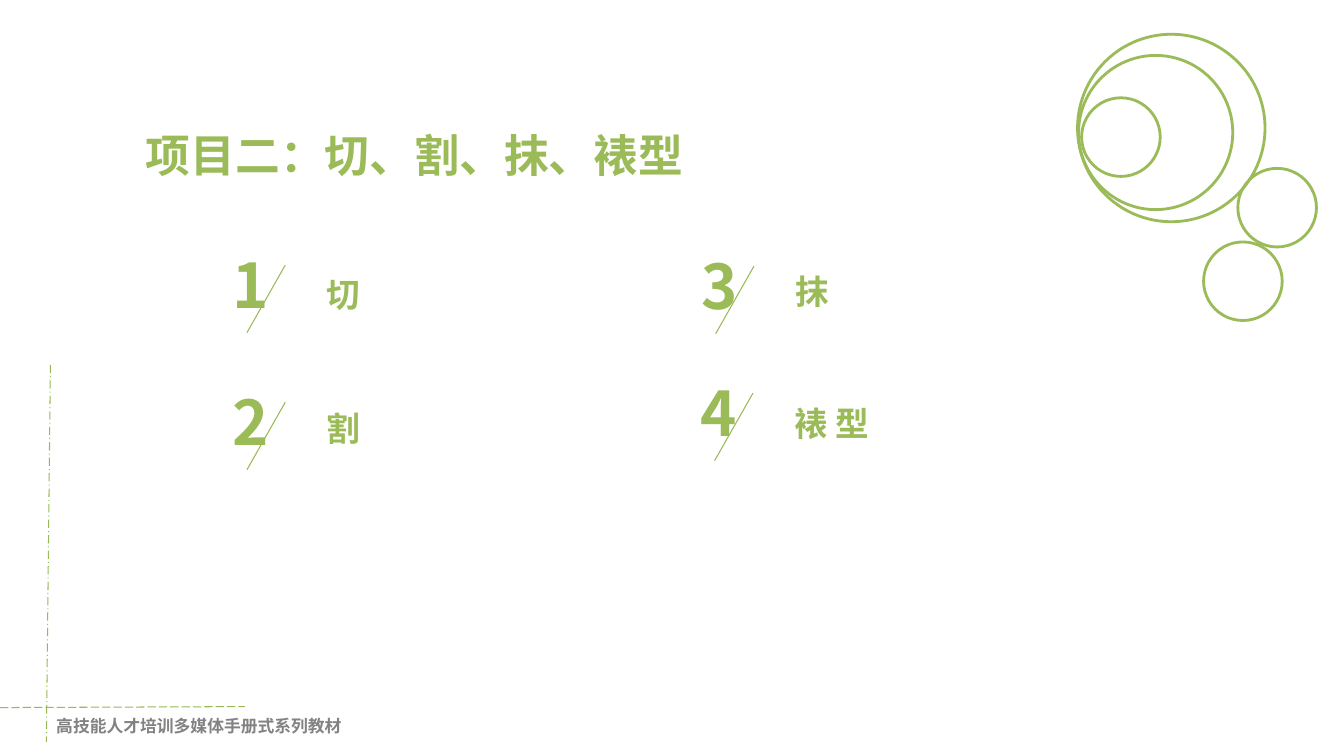
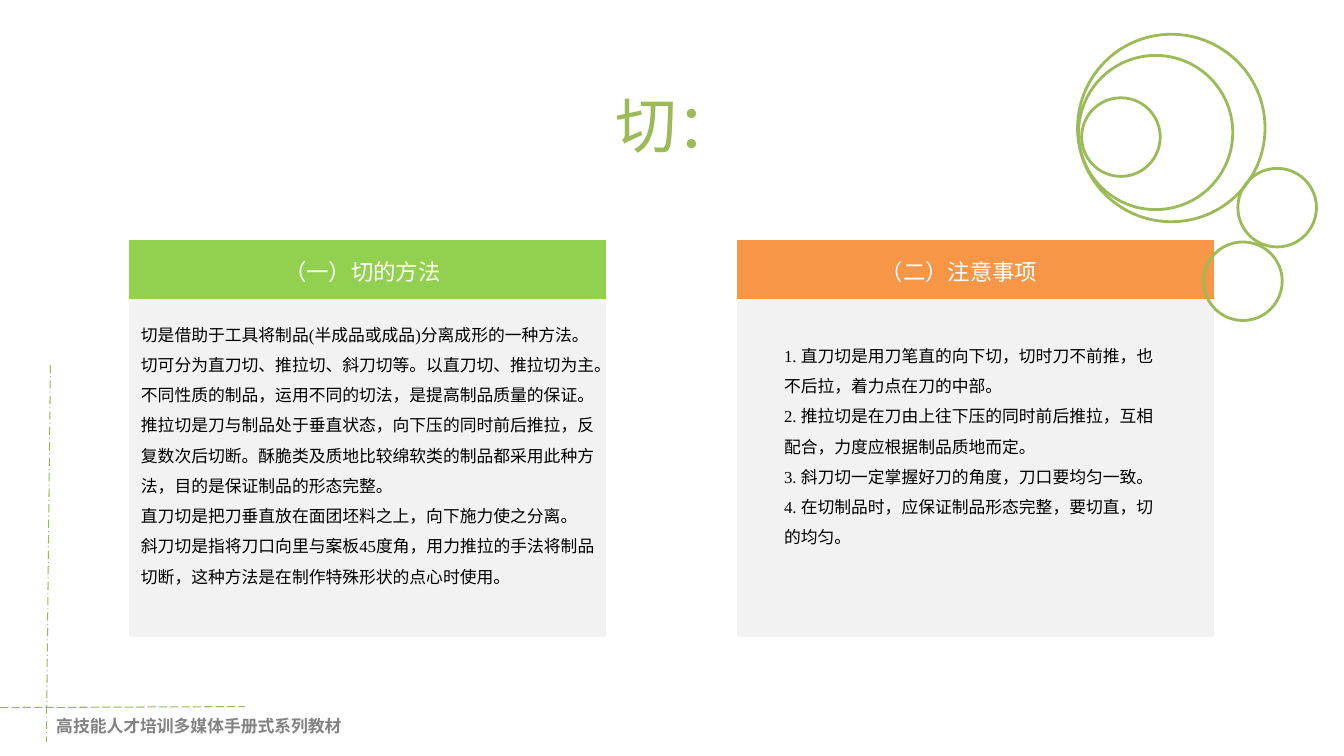
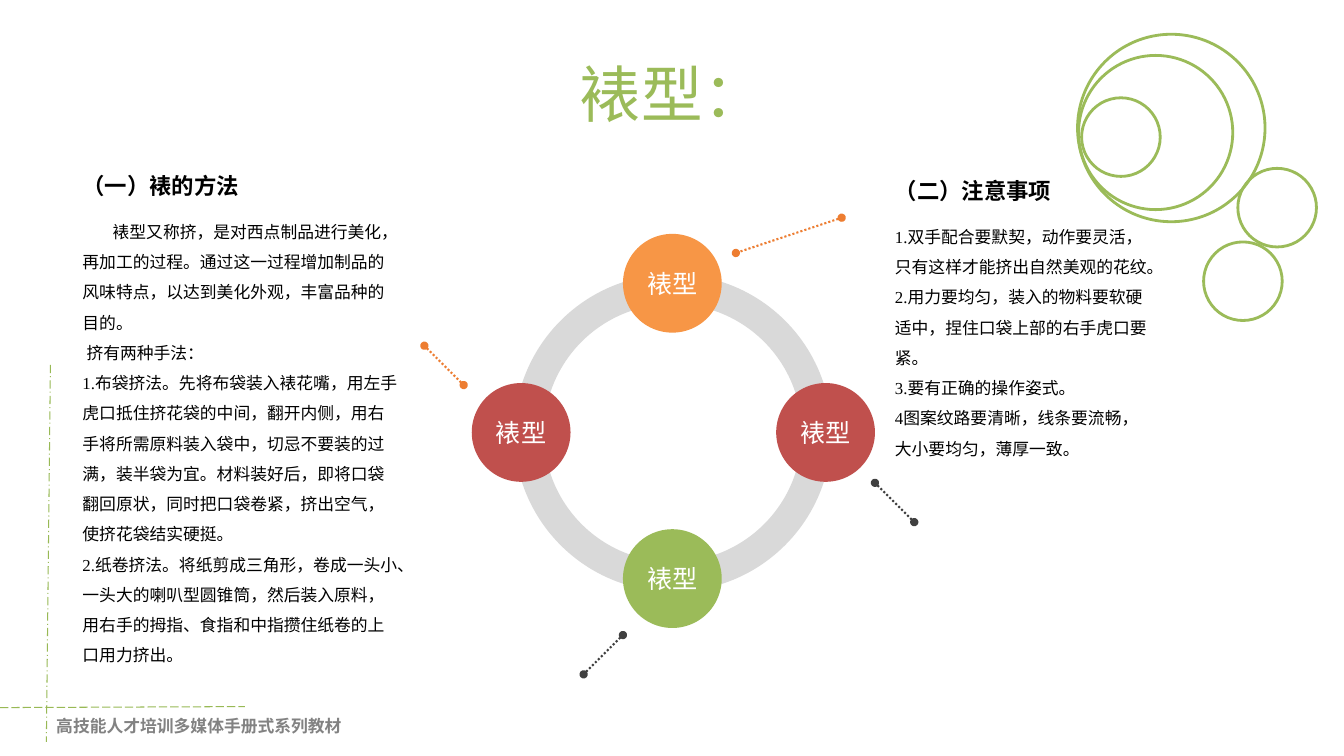
from lxml.etree import SubElement
from pptx import Presentation
from pptx.dml.color import RGBColor
from pptx.enum.dml import MSO_LINE
from pptx.enum.lang import MSO_LANGUAGE_ID
from pptx.enum.shapes import MSO_CONNECTOR, MSO_SHAPE
from pptx.enum.text import MSO_ANCHOR, PP_ALIGN
from pptx.oxml.ns import qn
from pptx.util import Inches, Pt

GREEN = RGBColor(0x9B, 0xBB, 0x59)
LINE_GREEN = RGBColor(0x98, 0xB9, 0x55)
BRIGHT_GREEN = RGBColor(0x92, 0xD0, 0x50)
ORANGE = RGBColor(0xF7, 0x96, 0x46)
POINTER_ORANGE = RGBColor(0xED, 0x7D, 0x31)
RED = RGBColor(0xC0, 0x50, 0x4D)
PANEL_GREY = RGBColor(0xF2, 0xF2, 0xF2)
RING_GREY = RGBColor(0xD9, 0xD9, 0xD9)
FOOTER_GREY = RGBColor(0x82, 0x82, 0x82)
DARK = RGBColor(0x40, 0x40, 0x40)
BLACK = RGBColor(0, 0, 0)
WHITE = RGBColor(0xFF, 0xFF, 0xFF)
SANS = "Noto Sans CJK SC"
SERIF = "Times New Roman"
CELL = 0.1


def grid(*cells):
    return [Inches(cell * CELL) for cell in cells]


def write(frame, paragraphs, size, color, font=SANS, bold=False,
          align=PP_ALIGN.LEFT, spacing=None):
    frame.word_wrap = True
    for index, text in enumerate(paragraphs):
        indent, text = text if isinstance(text, tuple) else (0, text)
        para = frame.paragraphs[0] if index == 0 else frame.add_paragraph()
        para.alignment = align
        para.line_spacing = spacing
        if indent:
            para._p.get_or_add_pPr().set("indent", str(grid(indent)[0]))
        span = para.add_run()
        span.text = text
        span.font.size = Pt(size)
        span.font.bold = bold
        span.font.color.rgb = color
        span.font.name = font
        span.font.language_id = MSO_LANGUAGE_ID.SIMPLIFIED_CHINESE
        SubElement(span._r.get_or_add_rPr(), qn("a:ea"), typeface=SANS)


def add_text(page, at, paragraphs, size, color, anchor=MSO_ANCHOR.TOP, **style):
    box = page.shapes.add_textbox(*grid(*at))
    box.text_frame.vertical_anchor = anchor
    write(box.text_frame, paragraphs, size, color, **style)


def add_title(page, at, text):
    add_text(page, at, [text], 44, GREEN, MSO_ANCHOR.MIDDLE, align=PP_ALIGN.CENTER)


def add_body(page, at, paragraphs):
    add_text(page, at, paragraphs, 12, BLACK, font=SERIF, spacing=1.5)


def add_figure(page, kind, at, fill=None, line=None):
    figure = page.shapes.add_shape(kind, *grid(*at))
    figure.shadow.inherit = False
    if fill is None:
        figure.fill.background()
    else:
        figure.fill.solid()
        figure.fill.fore_color.rgb = fill
    if line is None:
        figure.line.fill.background()
    else:
        figure.line.color.rgb = line
        figure.line.width = Pt(2)
    return figure


def add_line(page, ends, color=LINE_GREEN, width=0.75, dash=None, dots=False):
    line = page.shapes.add_connector(MSO_CONNECTOR.STRAIGHT, *grid(*ends))
    line.line.color.rgb = color
    line.line.width = Pt(width)
    if dash is not None:
        line.line.dash_style = dash
    if dots:
        for end in ("a:headEnd", "a:tailEnd"):
            SubElement(line.line._get_or_add_ln(), qn(end), type="oval")
    SubElement(line._element.spPr, qn("a:effectLst"))


def add_page(deck):
    page = deck.slides.add_slide(deck.slide_layouts[6])
    add_line(page, (5, 36.2, 4.6, 73.6), dash=MSO_LINE.LONG_DASH_DOT)
    add_line(page, (0, 70.2, 24.3, 70.1), dash=MSO_LINE.LONG_DASH)
    add_text(page, (4.6, 70.5, 32, 3), ["高技能人才培训多媒体手册式系列教材"],
             12, FOOTER_GREY, font=SERIF, bold=True)
    return page


def add_bubbles(page):
    for left, top, size in [(106.9, 3.4, 18.6), (107, 5.5, 15.3), (122.8, 16.7, 7.8),
                            (107.3, 9.7, 7.8), (119.4, 24, 7.8)]:
        add_figure(page, MSO_SHAPE.OVAL, (left, top, size, size), line=GREEN)


def add_menu_item(page, number, text, left, top, text_top):
    add_text(page, (left, top, 5.8, 8.4), [number], 44, GREEN, bold=True)
    add_line(page, (left + 6.2, top + 2.3, left + 2.4, top + 9))
    add_text(page, (left + 9.3, text_top, 31.2, 5.1), [text], 24, GREEN, bold=True)


def add_panel(page, left, color, heading, heading_left, body_at, paragraphs):
    add_figure(page, MSO_SHAPE.FLOWCHART_PROCESS, (left, 23.8, 47.3, 39.4), PANEL_GREY)
    add_figure(page, MSO_SHAPE.FLOWCHART_PROCESS, (left, 23.8, 47.3, 5.9), color)
    add_text(page, (heading_left, 25.1, 21.5, 3.7), [heading], 16, WHITE,
             align=PP_ALIGN.CENTER)
    add_body(page, body_at, paragraphs)


def add_node(page, center_x, center_y, color, text, size=9.8):
    at = (center_x - size / 2, center_y - size / 2, size, size)
    frame = add_figure(page, MSO_SHAPE.OVAL, at, color).text_frame
    frame.margin_left = frame.margin_right = 0
    frame.vertical_anchor = MSO_ANCHOR.MIDDLE
    write(frame, [text], 18, WHITE, align=PP_ALIGN.CENTER)


def add_section(page, left, top, width, height, heading, paragraphs):
    add_text(page, (left, top, width, 3.7), [heading], 16, BLACK, font=SERIF, bold=True)
    add_body(page, (left, top + 3.9, width, height), paragraphs)


def build_menu(deck):
    page = add_page(deck)
    for item in [("1", "切", 22.1, 24, 26.7), ("2", "割", 22.1, 37.6, 40),
                 ("3", "抹", 68.6, 24.1, 26.4), ("4", "裱 型", 68.5, 36.7, 39.5)]:
        add_menu_item(page, *item)
    add_text(page, (13.1, 12.2, 56.1, 6.4), ["项目二：切、割、抹、裱型"], 32, GREEN,
             bold=True, align=PP_ALIGN.CENTER)
    add_bubbles(page)


def build_cutting(deck):
    page = add_page(deck)
    add_title(page, (13.3, 8.3, 107.7, 7.9), "切：")
    add_panel(page, 12.8, BRIGHT_GREEN, "（一）切的方法", 25.2, (13, 30.7, 47.2, 28.3), [
        "切是借助于工具将制品(半成品或成品)分离成形的一种方法。",
        "切可分为直刀切、推拉切、斜刀切等。以直刀切、推拉切为主。不同性质的制品，运用不同的切法，是提高制品质量的保证。",
        "推拉切是刀与制品处于垂直状态，向下压的同时前后推拉，反复数次后切断。酥脆类及质地比较绵软类的制品都采用此种方法，目的是保证制品的形态完整。",
        "直刀切是把刀垂直放在面团坯料之上，向下施力使之分离。",
        "斜刀切是指将刀口向里与案板45度角，用力推拉的手法将制品切断，这种方法是在制作特殊形状的点心时使用。",
    ])
    add_panel(page, 73.1, ORANGE, "（二）注意事项", 84.4, (76.8, 32.8, 39.7, 22.2), [
        "1. 直刀切是用刀笔直的向下切，切时刀不前推，也不后拉，着力点在刀的中部。",
        "2. 推拉切是在刀由上往下压的同时前后推拉，互相配合，力度应根据制品质地而定。",
        "3. 斜刀切一定掌握好刀的角度，刀口要均匀一致。",
        "4. 在切制品时，应保证制品形态完整，要切直，切的均匀。",
    ])
    add_bubbles(page)


def build_piping(deck):
    page = add_page(deck)
    add_title(page, (6.7, 3, 120, 12.5), "裱型：")
    ring = add_figure(page, MSO_SHAPE.DONUT, (51, 27.2, 31.5, 31.5), RING_GREY)
    ring.adjustments[0] = 2.95 / 31.5
    for center_x, center_y, color in [(66.7, 28.1, ORANGE), (66.7, 57.4, GREEN),
                                      (51.7, 42.9, RED), (81.9, 42.9, RED)]:
        add_node(page, center_x, center_y, color, "裱型")
    for ends, color in [((42.1, 34.3, 46, 38.2), POINTER_ORANGE),
                        ((90.7, 51.8, 86.8, 47.9), DARK),
                        ((83.5, 21.6, 73, 25.1), POINTER_ORANGE),
                        ((61.8, 63, 57.9, 66.9), DARK)]:
        add_line(page, ends, color, 1.5, MSO_LINE.ROUND_DOT, dots=True)
    add_section(page, 87.8, 17.1, 27.2, 24.9, "（二）注意事项", [
        "1.双手配合要默契，动作要灵活，只有这样才能挤出自然美观的花纹。",
        "2.用力要均匀，装入的物料要软硬适中，捏住口袋上部的右手虎口要紧。",
        "3.要有正确的操作姿式。",
        "4图案纹路要清晰，线条要流畅，大小要均匀，薄厚一致。",
    ])
    add_section(page, 7.2, 16.6, 33.6, 46.4, "（一）裱的方法", [
        (3, "裱型又称挤，是对西点制品进行美化，再加工的过程。通过这一过程增加制品的风味特点，以达到美化外观，丰富品种的目的。"),
        (0.4, "挤有两种手法："),
        "1.布袋挤法。先将布袋装入裱花嘴，用左手虎口抵住挤花袋的中间，翻开内侧，用右手将所需原料装入袋中，切忌不要装的过满，装半袋为宜。材料装好后，即将口袋翻回原状，同时把口袋卷紧，挤出空气，使挤花袋结实硬挺。",
        "2.纸卷挤法。将纸剪成三角形，卷成一头小、一头大的喇叭型圆锥筒，然后装入原料，用右手的拇指、食指和中指攒住纸卷的上口用力挤出。",
    ])
    add_bubbles(page)


def main():
    deck = Presentation()
    deck.slide_width, deck.slide_height = grid(133.33, 75)
    for build in (build_menu, build_cutting, build_piping):
        build(deck)
    deck.save("out.pptx")


if __name__ == "__main__":
    main()
